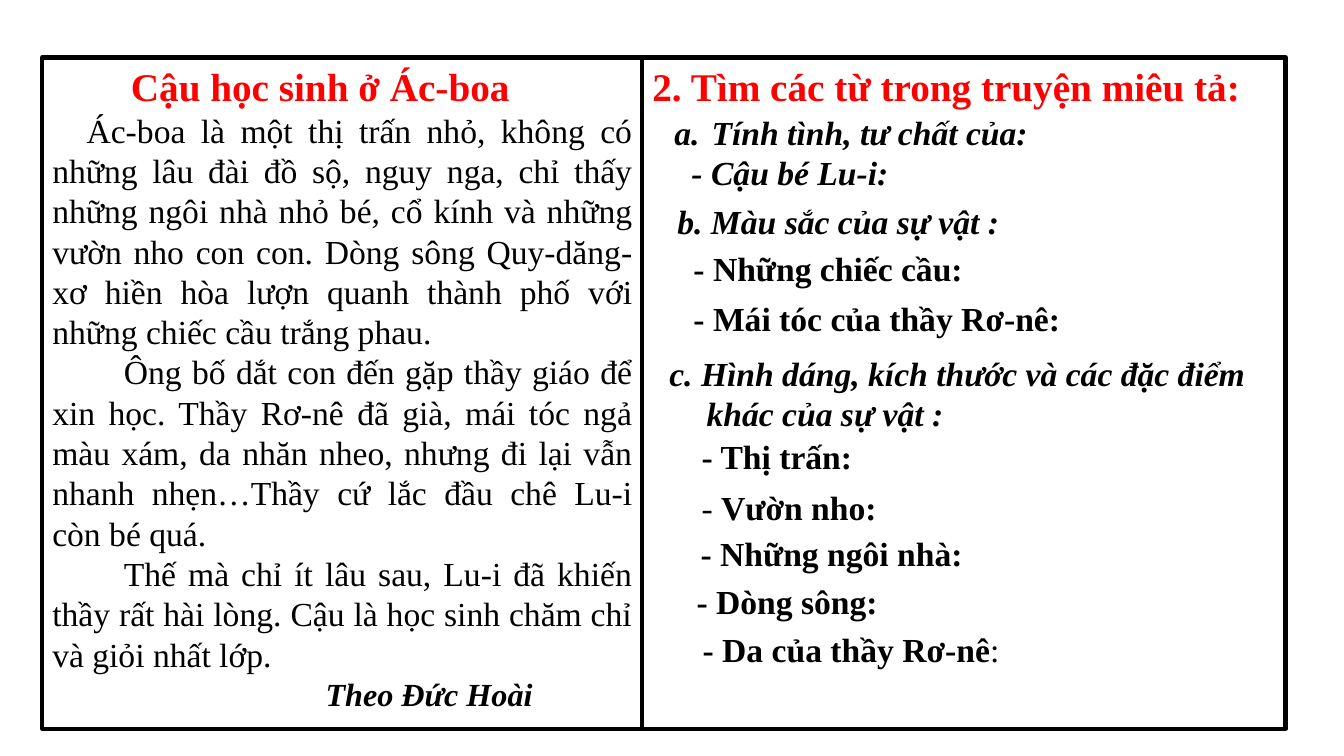
import pptx
import pptx.util
import pptx.dml.color
import pptx.enum.shapes
import pptx.enum.text
from pptx.util import Inches, Pt

COLORS = {"ink": "000000", "heading": "FF0000"}
FONT = "Times New Roman"
HANG = 0.37
TOP, PANEL_H = 0.57, 6.66
LEFT_X, RIGHT_X = 0.42, 6.37

STORY = [
    (0.34, "Ác-boa là một thị trấn nhỏ, không có những lâu đài đồ sộ, nguy nga, chỉ thấy "
           "những ngôi nhà nhỏ bé, cổ kính và những vườn nho con con. Dòng sông Quy-dăng-xơ "
           "hiền hòa lượn quanh thành phố với những chiếc cầu trắng phau."),
    (0.71, "Ông bố dắt con đến gặp thầy giáo để xin học. Thầy Rơ-nê đã già, mái tóc ngả màu "
           "xám, da nhăn nheo, nhưng đi lại vẫn nhanh nhẹn…Thầy cứ lắc đầu chê Lu-i còn bé quá."),
    (0.71, "Thế mà chỉ ít lâu sau, Lu-i đã khiến thầy rất hài lòng. Cậu là học sinh chăm chỉ "
           "và giỏi nhất lớp."),
]

# left, top, width, height, left indent, first-line indent, italic, text
PROMPTS = [
    (6.62, 1.94, 3.42, 0.51, HANG, -HANG, True, "b. Màu sắc của sự vật :"),
    (6.45, 2.41, 3.24, 0.5, 0.33, 0, False, "- Những chiếc cầu:"),
    (6.53, 2.91, 4.13, 0.5, 0.25, 0, False, "- Mái tóc của thầy Rơ-nê:"),
    (6.54, 3.45, 6.13, 0.91, HANG, -HANG, True,
     "c. Hình dáng, kích thước và các đặc điểm khác của sự vật :"),
    (6.86, 4.28, 1.71, 0.5, HANG, -HANG, False, "- Thị trấn:"),
    (6.85, 5.24, 2.91, 0.5, HANG, -HANG, False, "- Những ngôi nhà:"),
    (6.81, 5.71, 2.02, 0.5, HANG, -HANG, False, "- Dòng sông:"),
]


def add_run(p, text, size=24, color="ink", bold=False, italic=False):
    r = p.add_run()
    r.text = text
    r.font.name = FONT
    r.font.size = Pt(size)
    r.font.bold = bold
    r.font.italic = italic
    r.font.color.rgb = pptx.dml.color.RGBColor.from_string(COLORS[color])


def set_indent(p, left=0, first=0, number=None):
    """Indent a paragraph in inches, with an optional automatic numbering scheme."""
    pPr = p._p.get_or_add_pPr()
    pPr.set("marL", str(Inches(left)))
    pPr.set("indent", str(Inches(first)))
    if number:
        pPr.append(pptx.oxml.parse_xml(
            '<a:buAutoNum xmlns:a="http://schemas.openxmlformats.org/drawingml/2006/main" '
            f'type="{number}"/>'))


def place(sp, left, top, width, height):
    sp.left, sp.top, sp.width, sp.height = map(Inches, (left, top, width, height))


def prepare_frame(sp):
    tf = sp.text_frame
    tf.word_wrap = True
    tf.auto_size = pptx.enum.text.MSO_AUTO_SIZE.NONE
    tf.vertical_anchor = pptx.enum.text.MSO_ANCHOR.TOP
    return tf


def add_text_box(s, left, top, width, height):
    return prepare_frame(s.shapes.add_textbox(*map(Inches, (left, top, width, height))))


def add_panel(s, left, width):
    sp = s.shapes.add_shape(pptx.enum.shapes.MSO_SHAPE.RECTANGLE,
                            *map(Inches, (left, TOP, width, PANEL_H)))
    sp.shadow.inherit = False
    sp.fill.background()
    sp.line.color.rgb = pptx.dml.color.RGBColor.from_string(COLORS["ink"])
    sp.line.width = Pt(3)
    return sp


def add_story(s):
    tf = prepare_frame(add_panel(s, LEFT_X, RIGHT_X - LEFT_X))

    def start(p, first):
        p.alignment = pptx.enum.text.PP_ALIGN.JUSTIFY
        set_indent(p, first=first)
        return p

    add_run(start(tf.paragraphs[0], 0.78), "Cậu học sinh ở Ác-boa",
            size=28, color="heading", bold=True)
    for first, text in STORY:
        add_run(start(tf.add_paragraph(), first), text)
    add_run(start(tf.add_paragraph(), 2.71), "Theo Đức Hoài", size=23, bold=True, italic=True)


def add_heading(s):
    title = s.shapes.title
    place(title, RIGHT_X, TOP, 6.13, 0.57)
    p = prepare_frame(title).paragraphs[0]
    p.alignment = pptx.enum.text.PP_ALIGN.LEFT
    add_run(p, "2. Tìm các từ trong truyện miêu tả:", size=28, color="heading", bold=True)


def add_prompts(s):
    tf = add_text_box(s, 6.59, 1.06, 4.44, 0.91)
    p = tf.paragraphs[0]
    set_indent(p, HANG, -HANG, number="alphaLcPeriod")
    add_run(p, "Tính tình, tư chất của:", bold=True, italic=True)
    p = tf.add_paragraph()
    set_indent(p, 0.17)
    add_run(p, "- Cậu bé Lu-i:", bold=True, italic=True)

    for left, top, width, height, indent, first, italic, text in PROMPTS:
        p = add_text_box(s, left, top, width, height).paragraphs[0]
        set_indent(p, indent, first)
        add_run(p, text, bold=True, italic=italic)

    p = add_text_box(s, 6.86, 4.78, 1.96, 0.5).paragraphs[0]
    set_indent(p, HANG, -HANG)
    add_run(p, "- ")
    add_run(p, "Vườn nho:", bold=True)

    p = add_text_box(s, 6.87, 6.19, 3.18, 0.5).paragraphs[0]
    set_indent(p, HANG, -HANG)
    add_run(p, "- Da của thầy Rơ-nê", bold=True)
    add_run(p, ":")


def main():
    prs = pptx.Presentation()
    prs.slide_width, prs.slide_height = Inches(13.33), Inches(7.5)
    s = prs.slides.add_slide(prs.slide_layouts[5])
    add_story(s)
    add_heading(s)
    add_prompts(s)
    add_panel(s, RIGHT_X, 6.38)
    prs.save("out.pptx")


if __name__ == "__main__":
    main()
